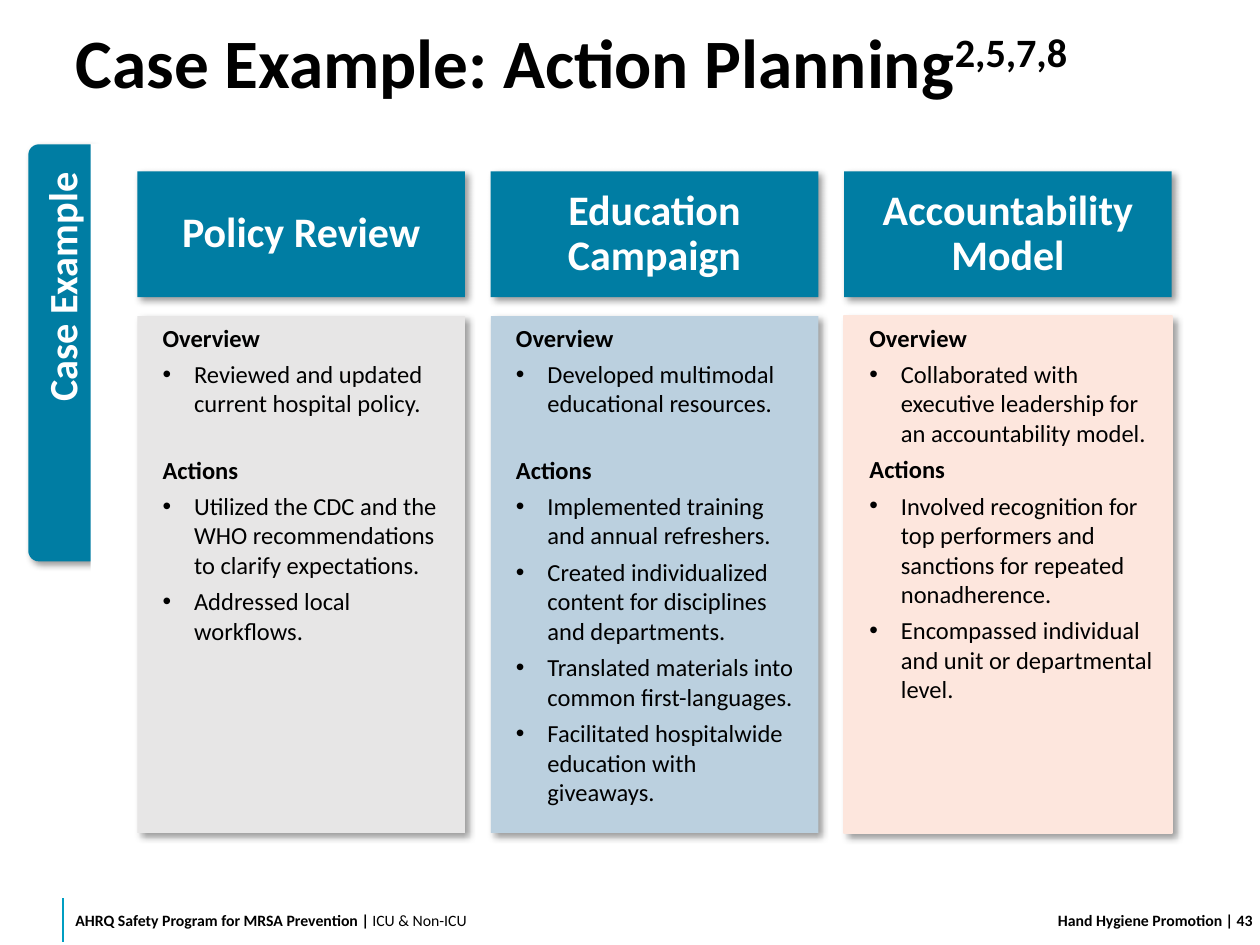
from lxml.etree import SubElement
from pptx import Presentation
from pptx.dml.color import RGBColor
from pptx.enum.shapes import MSO_CONNECTOR, MSO_SHAPE
from pptx.enum.text import MSO_ANCHOR, MSO_AUTO_SIZE, PP_ALIGN
from pptx.oxml.ns import qn
from pptx.util import Inches, Pt

THEME = {
    "font": "Calibri",
    "teal": "007DA3", "rule": "009EC2", "ink": "000000", "paper": "FFFFFF",
    "title": 39.6, "heading": 24, "tab": 23, "body": 14, "footer": 9,
}

TITLE, CITATIONS = "Case Example: Action Planning", "2,5,7,8"
TAB = "Case Example"
PROGRAM, UNITS = "AHRQ Safety Program for MRSA Prevention | ", "ICU & Non-ICU"
MODULE, PAGE = "Hand Hygiene Promotion", " | 43"

COLUMNS = [
    {"heading": "Policy Review", "fill": "E7E6E6", "border": None, "actions_gap": 19,
     "overview": ["Reviewed and updated current hospital policy."],
     "actions": ["Utilized the CDC and the WHO recommendations to clarify expectations.",
                 "Addressed local workflows."]},
    {"heading": "Education Campaign", "fill": "BBD0DF", "border": None, "actions_gap": 19,
     "overview": ["Developed multimodal educational resources."],
     "actions": ["Implemented training and annual refreshers.",
                 "Created individualized content for disciplines and departments.",
                 "Translated materials into common first-languages.",
                 "Facilitated hospitalwide education with giveaways."]},
    {"heading": "Accountability Model", "fill": "FDE6DD", "border": "FDE6DD", "actions_gap": 2,
     "overview": ["Collaborated with executive leadership for an accountability model."],
     "actions": ["Involved recognition for top performers and sanctions for repeated nonadherence.",
                 "Encompassed individual and unit or departmental level."]},
]

COLUMN_LEFT, COLUMN_PITCH, COLUMN_WIDTH = 1.09, 2.805, 2.6
HEADING_TOP, HEADING_HEIGHT = 1.36, 1
CARD_TOP, CARD_HEIGHT = 2.51, 4.1
FOOTER_TOP, FOOTER_HEIGHT = 7.1, 0.4


def apply(target, formats):
    for name, value in formats.items():
        setattr(target, name, value)


def place(shape, *box):
    apply(shape, dict(zip(("left", "top", "width", "height"), map(Inches, box))))


def set_frame(shape, anchor, insets):
    sides = ("margin_left", "margin_top", "margin_right", "margin_bottom")
    apply(shape.text_frame, {
        "word_wrap": True, "auto_size": MSO_AUTO_SIZE.NONE, "vertical_anchor": anchor,
        **dict(zip(sides, map(Inches, insets)))})
    return shape.text_frame


def add_run(paragraph, text, size, color="ink", bold=True):
    run = paragraph.add_run()
    run.text = text
    apply(run.font, {"name": THEME["font"], "size": Pt(THEME[size]), "bold": bold})
    run.font.color.rgb = RGBColor.from_string(THEME[color])
    return run


def paint(shape, fill, border=None):
    shape.fill.solid()
    shape.fill.fore_color.rgb = RGBColor.from_string(fill)
    if border:
        shape.line.color.rgb = RGBColor.from_string(border)
        shape.line.width = Pt(1)
    else:
        shape.line.fill.background()
    shape.shadow.inherit = False


def add_shadow(shape):
    effects = shape._element.spPr.find(qn("a:effectLst"))
    shadow = SubElement(effects, qn("a:outerShdw"), blurRad=str(Pt(4)), dist=str(Pt(3)),
                        dir="2700000", algn="tl", rotWithShape="0")
    color = SubElement(shadow, qn("a:srgbClr"), val=THEME["ink"])
    SubElement(color, qn("a:alpha"), val="40000")


def set_bullet(paragraph, bulleted):
    properties = paragraph._p.get_or_add_pPr()
    properties.set("marL", str(Inches(0.25) if bulleted else 0))
    properties.set("indent", str(Inches(-0.25) if bulleted else 0))
    if bulleted:
        SubElement(properties, qn("a:buFont"), typeface="Arial")
        SubElement(properties, qn("a:buChar"), char="•")
    else:
        SubElement(properties, qn("a:buNone"))


def add_block(slide, preset, box, fill):
    block = slide.shapes.add_shape(preset, *map(Inches, box))
    paint(block, fill)
    return block


def add_footer_text(slide, left, width, insets, runs, align=PP_ALIGN.LEFT):
    footer = slide.shapes.add_textbox(
        *map(Inches, (left, FOOTER_TOP, width, FOOTER_HEIGHT)))
    paragraph = set_frame(footer, MSO_ANCHOR.MIDDLE, insets).paragraphs[0]
    paragraph.alignment = align
    for text, bold in runs:
        add_run(paragraph, text, "footer", bold=bold)


def add_furniture(slide):
    rule = slide.shapes.add_connector(
        MSO_CONNECTOR.STRAIGHT, *map(Inches, (0.5, 7.13, 0.5, 7.48)))
    rule.line.color.rgb = RGBColor.from_string(THEME["rule"])
    rule.line.width = Pt(1)
    SubElement(rule._element.spPr, qn("a:effectLst"))

    add_footer_text(slide, 0.5, 4.1, (0.1, 0, 0.1, 0), [(PROGRAM, True), (UNITS, False)])
    add_footer_text(slide, 7.1, 2.6, (0.1, 0.05, 0, 0.05), [(MODULE, True)], PP_ALIGN.RIGHT)
    add_footer_text(slide, 9.7, 0.3, (0, 0.05, 0, 0.05), [(PAGE, True)])

    tab = add_block(slide, MSO_SHAPE.ROUND_2_SAME_RECTANGLE,
                    (-1.18, 2.55, 3.31, 0.5), THEME["teal"])
    tab.rotation = 270
    add_shadow(tab)
    label = set_frame(tab, MSO_ANCHOR.MIDDLE, (0, 0, 0.2, 0)).paragraphs[0]
    label.alignment = PP_ALIGN.RIGHT
    add_run(label, TAB, "tab", "paper")

    panel = add_block(slide, MSO_SHAPE.SNIP_2_DIAG_RECTANGLE,
                      (0.72, 1.14, 9, 5.71), THEME["paper"])
    panel.adjustments[0], panel.adjustments[1] = 0, 0.055


def fill_title(title):
    place(title, 0.5, 0, 9, 1)
    paragraph = set_frame(title, MSO_ANCHOR.MIDDLE, (0.1, 0.1, 0.1, 0.05)).paragraphs[0]
    apply(paragraph, {"alignment": PP_ALIGN.LEFT, "line_spacing": 0.9})
    add_run(paragraph, TITLE, "title")
    citations = add_run(paragraph, CITATIONS, "title")
    citations.font._element.set("baseline", "30000")


def add_heading(slide, left, text):
    heading = add_block(slide, MSO_SHAPE.RECTANGLE,
                        (left, HEADING_TOP, COLUMN_WIDTH, HEADING_HEIGHT), THEME["teal"])
    add_shadow(heading)
    paragraph = set_frame(heading, MSO_ANCHOR.MIDDLE, (0.1, 0.05, 0.1, 0.05)).paragraphs[0]
    apply(paragraph, {"alignment": PP_ALIGN.CENTER, "line_spacing": 0.9})
    add_run(paragraph, text, "heading", "paper")


def fill_card(card, left, column):
    place(card, left, CARD_TOP, COLUMN_WIDTH, CARD_HEIGHT)
    paint(card, column["fill"], column["border"])
    add_shadow(card)
    frame = set_frame(card, MSO_ANCHOR.TOP, (0.2, 0.05, 0.15, 0.05))
    entries = [("Overview", False, 0)]
    entries += [(text, True, 2) for text in column["overview"]]
    entries += [("Actions", False, column["actions_gap"])]
    entries += [(text, True, 2) for text in column["actions"]]
    for index, (text, bulleted, before) in enumerate(entries):
        paragraph = frame.add_paragraph() if index else frame.paragraphs[0]
        set_bullet(paragraph, bulleted)
        apply(paragraph, {"alignment": PP_ALIGN.LEFT, "line_spacing": 1.0,
                          "space_before": Pt(before), "space_after": Pt(2)})
        add_run(paragraph, text, "body", bold=not bulleted)


def main():
    deck = Presentation()
    apply(deck, {"slide_width": Inches(10), "slide_height": Inches(7.5)})
    slide = deck.slides.add_slide(deck.slide_layouts.get_by_name("Comparison"))
    title, *cards = list(slide.placeholders)
    spare = cards.pop()._element
    spare.getparent().remove(spare)

    add_furniture(slide)
    fill_title(title)
    for index, (card, column) in enumerate(zip(cards, COLUMNS)):
        left = COLUMN_LEFT + index * COLUMN_PITCH
        add_heading(slide, left, column["heading"])
        fill_card(card, left, column)
    for placeholder in (title, *cards):
        slide.shapes._spTree.append(placeholder._element)
    deck.save("out.pptx")


if __name__ == "__main__":
    main()
